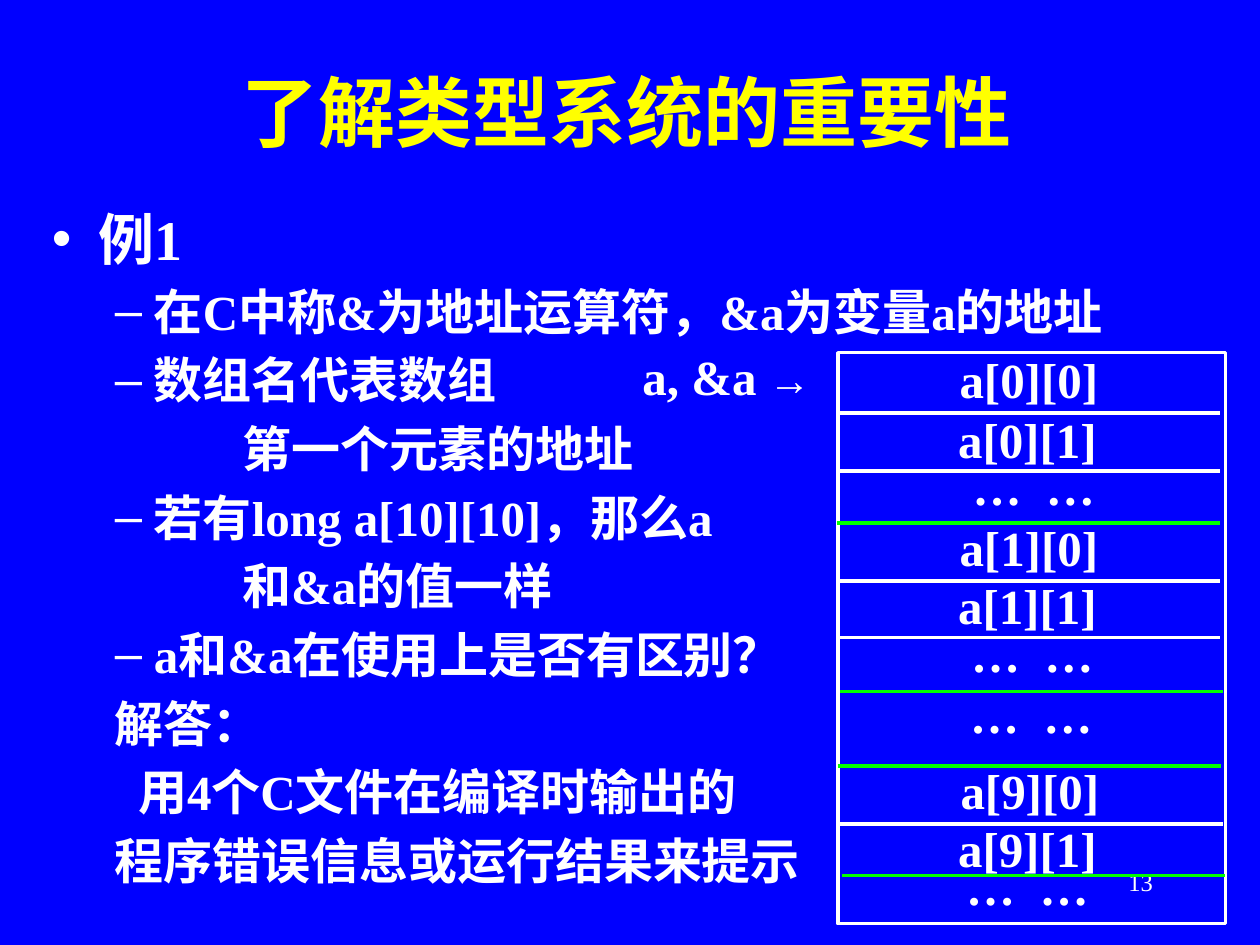
from pptx import Presentation
from pptx.dml.color import RGBColor
from pptx.enum.shapes import MSO_CONNECTOR as Conn, MSO_SHAPE as Shape
from pptx.enum.text import MSO_ANCHOR as Anchor, MSO_AUTO_SIZE as Fit, PP_ALIGN as Align
from pptx.oxml.ns import qn
from pptx.util import Cm, Pt
from lxml.etree import SubElement

# Content
WHITE, GREEN, YELLOW, BLUE = "FFFFFF", "00FF00", "FFFF00", "0000FF"
ROMAN, SANS = "Times New Roman", "Arial"
TITLE = "了解类型系统的重要性"

# Paragraph kinds: level, left margin, first-line indent, bullet
KINDS = {
    "head": (0, 0.95, -0.95, "•"),
    "item": (1, 2.06, -0.79, "–"),
    "more": (1, 3.84, 0, None),
    "flat": (1, 1.27, 0, None),
    "step": (1, 1.74, 0, None),
}
# Kind, then runs in alternating fonts; an empty first run starts with ROMAN
BODY = [
    ("head", ["", "例1"]),
    ("item", ["在", "C", "中称", "&", "为地址运算符，", "&a", "为变量", "a", "的地址"]),
    ("item", ["数组名代表数组"]),
    ("more", ["第一个元素的地址"]),
    ("item", ["若有", "long a[10][10]，那么a"]),
    ("more", ["和", "&a的值一样"]),
    ("item", ["", "a", "和", "&a", "在使用上是否有区别？"]),
    ("flat", ["解答："]),
    ("step", ["用", "4", "个", "C文件在编译时输出的"]),
    ("flat", ["", "程序错误信息或运行结果来提示"]),
]
# Memory cells: text, left, top; then the rule below: left, height, colour
DOTS = "…  …"
CELLS = [
    ("a[0][0]", 17.02, 6.81, (16.87, 8.33, WHITE)),
    ("a[0][1]", 16.99, 8.03, (16.87, 9.5, WHITE)),
    (DOTS, 17.12, 8.97, (16.87, 10.54, GREEN)),
    ("a[1][0]", 17.02, 10.21, (16.87, 11.71, WHITE)),
    ("a[1][1]", 16.99, 11.38, (16.87, 12.85, WHITE)),
    (DOTS, 17.09, 12.34, (16.94, 13.94, GREEN)),
    (DOTS, 17.07, 13.56, (16.89, 15.44, GREEN)),
    ("a[9][0]", 17.04, 15.11, (16.94, 16.61, WHITE)),
    ("a[9][1]", 16.99, 16.28, (16.97, 17.65, GREEN)),
    (DOTS, 16.99, 17.04, None),
]
CELL_W, CELL_H, RULE_W = 7.44, 1.59, 7.72


# Helpers
def tint(color, code):
    color.rgb = RGBColor.from_string(code)


def write(para, text, size, code=WHITE, name=ROMAN, bold=True):
    run = para.add_run()
    run.text = text
    for key, val in {"size": Pt(size), "name": name, "bold": bold}.items():
        setattr(run.font, key, val)
    tint(run.font.color, code)


def place(shape, *box):
    for key, val in zip(("left", "top", "width", "height"), box):
        setattr(shape, key, Cm(val))


def label(box, align, top=0.13):
    frame = slide.shapes.add_textbox(*map(Cm, box)).text_frame
    form = {"word_wrap": True, "margin_left": Cm(0.25), "margin_right": Cm(0.25),
            "margin_top": Cm(top), "margin_bottom": Cm(0.13)}
    for key, val in form.items():
        setattr(frame, key, val)
    para = frame.paragraphs[0]
    para.alignment = align
    return para


def stroke(line, code):
    tint(line.color, code)
    line.width = Pt(2)


def rule(left, y, code):
    line = slide.shapes.add_connector(
        Conn.STRAIGHT, Cm(left), Cm(y), Cm(left + RULE_W), Cm(y))
    stroke(line.line, code)
    SubElement(line._element.spPr, qn("a:effectLst"))


# Slide
deck = Presentation()
deck.slide_width, deck.slide_height = Cm(25.4), Cm(19.05)
slide = deck.slides.add_slide(deck.slide_layouts[1])
slide.background.fill.solid()
tint(slide.background.fill.fore_color, BLUE)

# Title
title, body = slide.placeholders
place(title, 0.64, 0.64, 24, 3.2)
title.text_frame.vertical_anchor = Anchor.MIDDLE
title.text_frame.paragraphs[0].alignment = Align.CENTER
write(title.text_frame.paragraphs[0], TITLE, 44, YELLOW)

# Body list
place(body, 0.79, 3.99, 24, 14)
frame = body.text_frame
frame.auto_size = Fit.NONE
for i, (kind, runs) in enumerate(BODY):
    level, left, first, mark = KINDS[kind]
    para = frame.add_paragraph() if i else frame.paragraphs[0]
    para.level = level
    if not i:
        para.space_before = Pt(0)
    props = para._p.get_or_add_pPr()
    props.set("marL", str(Cm(left)))
    props.set("indent", str(Cm(first)))
    if mark:
        SubElement(props, qn("a:buChar"), char=mark)
    else:
        SubElement(props, qn("a:buNone"))
    for j, text in enumerate(runs):
        if text:
            write(para, text, 28 if level else 32, name=ROMAN if j % 2 else SANS)

# Slide number
write(label((18.21, 17.35, 5.28, 1.27), Align.RIGHT), "13", 14, bold=False)

# Memory layout of the array
store = slide.shapes.add_shape(Shape.RECTANGLE, *map(Cm, (16.89, 7.11, 7.82, 11.51)))
store.shadow.inherit = False
store.fill.background()
stroke(store.line, WHITE)
for text, left, top, edge in CELLS:
    write(label((left, top, CELL_W, CELL_H), Align.CENTER, 0.23), text, 28)
    if edge:
        rule(*edge)

# Pointer to the first cell
para = label((12.7, 6.86, 4.19, 1.45), Align.LEFT)
write(para, "a, &a ", 28)
write(para, "→", 24)

deck.save("out.pptx")
